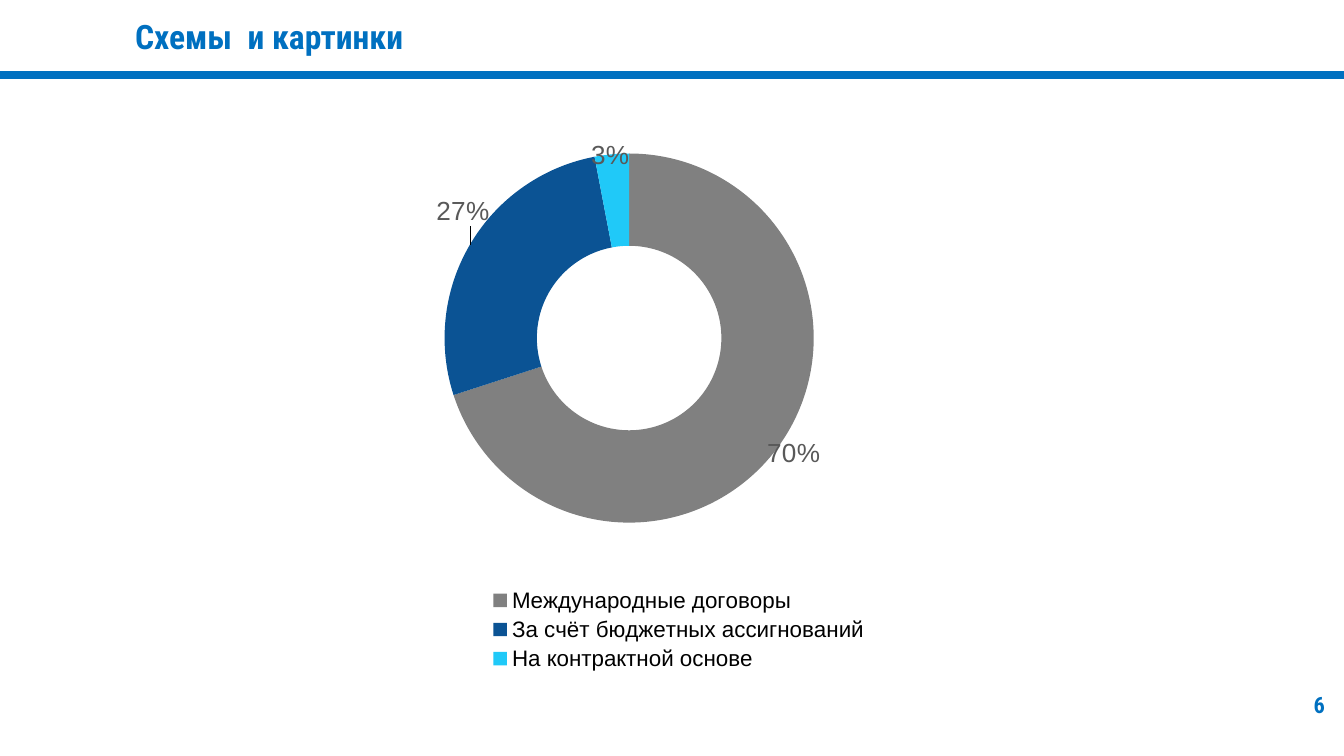
import lxml.etree
import pptx
import pptx.chart.data
import pptx.dml.color
import pptx.enum.chart
import pptx.enum.shapes
import pptx.enum.text
import pptx.oxml
import pptx.oxml.ns
import pptx.util

PX = 914400 / 134.4
COLORS = {
    "accent": "0070C0",
    "treaties": "808080",
    "budget": "0B5394",
    "contract": "20C9F8",
    "label": "595959",
    "legend": "000000",
}
Align = pptx.enum.text.PP_ALIGN


def px(*lengths):
    return [round(length * PX) for length in lengths]


def style_font(font, size, color, name="Arial", bold=False):
    for key, value in {"size": pptx.util.Pt(size), "name": name, "bold": bold}.items():
        setattr(font, key, value)
    font.color.rgb = pptx.dml.color.RGBColor.from_string(COLORS[color])


presentation = pptx.Presentation()
presentation.slide_width, presentation.slide_height = px(1344, 756)
slide = presentation.slides.add_slide(presentation.slide_layouts[6])

rule = slide.shapes.add_shape(pptx.enum.shapes.MSO_SHAPE.RECTANGLE, *px(0, 71, 1344, 8))
rule.shadow.inherit = False
rule.fill.solid()
rule.fill.fore_color.rgb = pptx.dml.color.RGBColor.from_string(COLORS["accent"])
rule.line.fill.background()

for text, box, size, alignment in [
    ("Схемы  и картинки", (122, -20, 773, 113), 18, Align.LEFT),
    ("6", (1120, 681, 218, 48), 12, Align.RIGHT),
]:
    frame = slide.shapes.add_textbox(*px(*box)).text_frame
    margins = dict.fromkeys(["margin_left", "margin_top", "margin_right", "margin_bottom"], px(13)[0])
    for key, value in {
        **margins,
        "word_wrap": True,
        "vertical_anchor": pptx.enum.text.MSO_ANCHOR.MIDDLE,
    }.items():
        setattr(frame, key, value)
    paragraph = frame.paragraphs[0]
    paragraph.alignment = alignment
    run = paragraph.add_run()
    run.text = text
    style_font(run.font, size, "accent", "Roboto Condensed", True)

slices = [
    ("Международные договоры", 70, "treaties", (0.09, 0.06)),
    ("За счёт бюджетных ассигнований", 27, "budget", (-0.08, -0.1)),
    ("На контрактной основе", 3, "contract", (-0.01, -0.08)),
]
chart_data = pptx.chart.data.CategoryChartData()
chart_data.categories = [entry[0] for entry in slices]
chart_data.add_series("Series 1", [entry[1] for entry in slices])
chart = slide.shapes.add_chart(
    pptx.enum.chart.XL_CHART_TYPE.DOUGHNUT, *px(386, 113, 586, 563), chart_data
).chart
style_font(chart.font, 10, "legend")
chart.has_title = False
chart.has_legend = True
chart.legend.position = pptx.enum.chart.XL_LEGEND_POSITION.BOTTOM
chart.legend.include_in_layout = False
style_font(chart.legend.font, 12, "legend")

plot = chart.plots[0]
plot.vary_by_categories = True
series = plot.series[0]
qn = pptx.oxml.ns.qn
namespace = pptx.oxml.ns.nsdecls("c")

for index, (name, value, color, (shift_x, shift_y)) in enumerate(slices):
    point = series.points[index]
    point.format.fill.solid()
    point.format.fill.fore_color.rgb = pptx.dml.color.RGBColor.from_string(COLORS[color])
    point.format.line.fill.background()
    style_font(point.data_label.font, 14, "label")
    label = series._element.xpath("c:dLbls/c:dLbl")[index]
    for tag, shown in {"c:showVal": "0", "c:showPercent": "1"}.items():
        label.find(qn(tag)).set("val", shown)
    label.insert(1, pptx.oxml.parse_xml(
        f'<c:layout {namespace}><c:manualLayout>'
        f'<c:x val="{shift_x}"/><c:y val="{shift_y}"/>'
        f'</c:manualLayout></c:layout>'
    ))

for key, value in {"show_percentage": True, "show_value": False}.items():
    setattr(series.data_labels, key, value)
style_font(series.data_labels.font, 14, "label")

doughnut = plot._element
doughnut.find(qn("c:holeSize")).set("val", "78")
plot_area = doughnut.getparent()
for layout in plot_area.findall(qn("c:layout")):
    plot_area.remove(layout)
layout = lxml.etree.Element(qn("c:layout"))
manual = lxml.etree.SubElement(layout, qn("c:manualLayout"))
for tag, value in {
    "layoutTarget": "inner", "xMode": "edge", "yMode": "edge",
    "x": "0.1", "y": "0.06", "w": "0.63", "h": "0.68",
}.items():
    lxml.etree.SubElement(manual, qn(f"c:{tag}")).set("val", value)
plot_area.insert(0, layout)

presentation.save("out.pptx")
